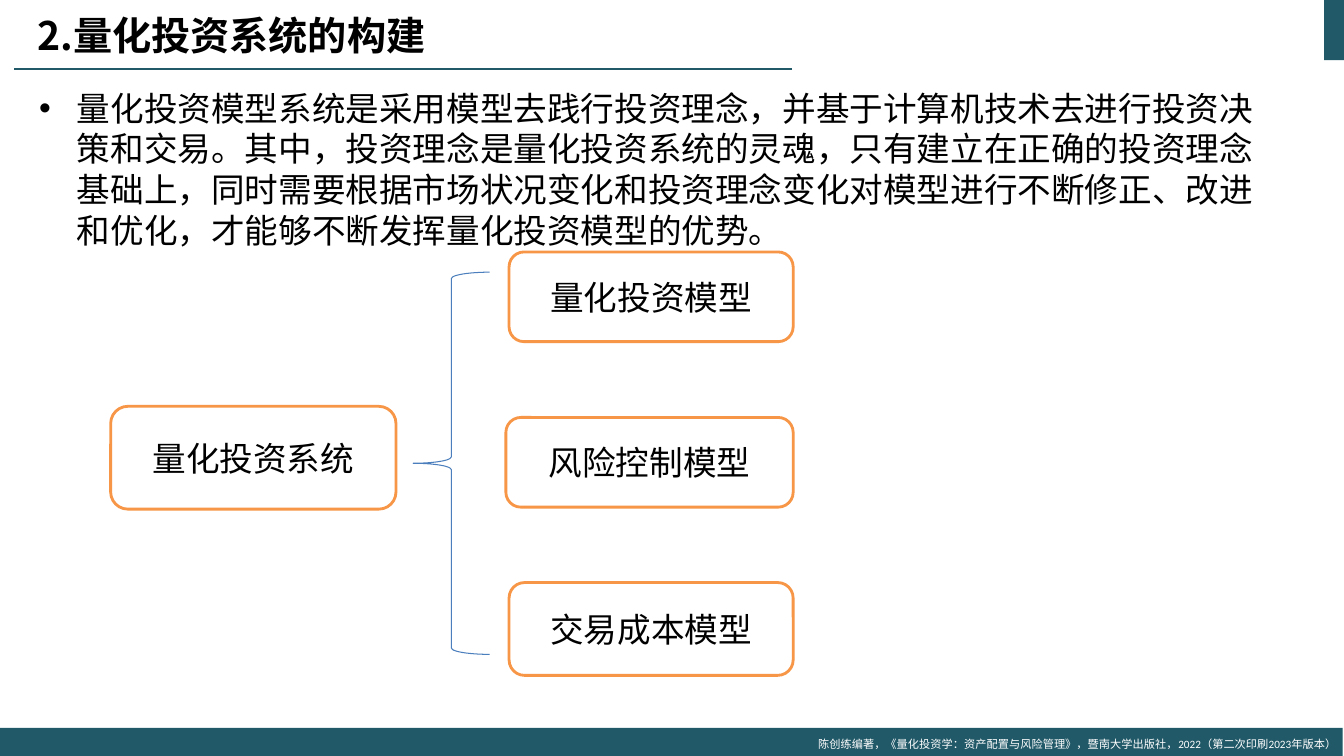
from dataclasses import dataclass

import pptx
import pptx.dml.color
import pptx.enum.shapes
import pptx.enum.text
import pptx.oxml
import pptx.oxml.ns
import pptx.util

Cm = pptx.util.Cm
Pt = pptx.util.Pt
rgb = pptx.dml.color.RGBColor.from_string
SHAPE = pptx.enum.shapes.MSO_SHAPE
ALIGN = pptx.enum.text.PP_ALIGN
ANCHOR = pptx.enum.text.MSO_ANCHOR


@dataclass
class Theme:
    teal: str = "215968"
    orange: str = "F79646"
    blue: str = "4B7EBC"
    white: str = "FFFFFF"
    black: str = "000000"
    cjk: str = "Noto Sans CJK SC"
    latin: str = "Calibri"
    body_font: str = "Arial"
    title_size: int = 28
    text_size: int = 24
    footer_size: int = 8


theme = Theme()


def add_panel(kind, box, fill=None, line=None, width=0.75):
    """Add a preset shape without shadow; box is left, top, width, height in cm."""
    sp = slide.shapes.add_shape(kind, *[Cm(v) for v in box])
    sp.shadow.inherit = False
    if fill:
        sp.fill.solid()
        sp.fill.fore_color.rgb = rgb(fill)
    else:
        sp.fill.background()
    if line:
        sp.line.color.rgb = rgb(line)
        sp.line.width = Pt(width)
    else:
        sp.line.fill.background()
    return sp


def write(sp, text, size, font, color=theme.black, align=ALIGN.CENTER, bold=False):
    """Fill a shape with one paragraph, using the theme's East Asian font."""
    tf = sp.text_frame
    tf.word_wrap = True
    tf.vertical_anchor = ANCHOR.MIDDLE
    p = tf.paragraphs[0]
    p.text = text
    p.alignment = align
    r = p.runs[0]
    r.font.size = Pt(size)
    r.font.name = font
    r.font.bold = bold
    r.font.color.rgb = rgb(color)
    ea = pptx.oxml.parse_xml(
        f'<a:ea {pptx.oxml.ns.nsdecls("a")} typeface="{theme.cjk}"/>')
    r.font._element.find(pptx.oxml.ns.qn("a:latin")).addnext(ea)
    return p


prs = pptx.Presentation()
prs.slide_width = Cm(33.87)
prs.slide_height = Cm(19.05)
slide = prs.slides.add_slide(prs.slide_layouts[6])

# Frame: corner block, title rule, footer
add_panel(SHAPE.RECTANGLE, (33.37, 0, 0.5, 1.52), fill=theme.teal)
rule = slide.shapes.add_connector(
    pptx.enum.shapes.MSO_CONNECTOR.STRAIGHT, Cm(19.96), Cm(1.73), Cm(0.36), Cm(1.73))
rule.line.color.rgb = rgb(theme.teal)
rule.line.width = Pt(1.5)
rule._element.spPr.append(
    pptx.oxml.parse_xml(f'<a:effectLst {pptx.oxml.ns.nsdecls("a")}/>'))
add_panel(SHAPE.RECTANGLE, (0, 18.34, 33.84, 0.71), fill=theme.teal)
footer = slide.shapes.add_textbox(Cm(20.24), Cm(18.44), Cm(13.69), Cm(0.61))
write(footer, "陈创练编著，《量化投资学：资产配置与风险管理》，暨南大学出版社，2022（第二次印刷2023年版本）",
      theme.footer_size, theme.latin, theme.white, ALIGN.RIGHT)

title = slide.shapes.add_textbox(Cm(-2.08), Cm(0.1), Cm(15.82), Cm(1.55))
write(title, "2.量化投资系统的构建", theme.title_size, theme.cjk, bold=True)

# Diagram: the system and its three models
add_panel(SHAPE.LEFT_BRACE, (10.41, 6.86, 1.93, 9.63), line=theme.blue)
nodes = [
    ("量化投资系统", (2.79, 10.24, 7.19, 2.59)),
    ("量化投资模型", (12.83, 6.35, 7.16, 2.26)),
    ("风险控制模型", (12.75, 10.52, 7.24, 2.26)),
    ("交易成本模型", (12.83, 14.68, 7.16, 2.34)),
]
for label, box in nodes:
    node = add_panel(SHAPE.ROUNDED_RECTANGLE, box, theme.white, theme.orange, 2)
    write(node, label, theme.text_size, theme.latin)

body = slide.shapes.add_textbox(Cm(0.74), Cm(2.08), Cm(31.39), Cm(4.37))
p = write(
    body,
    "量化投资模型系统是采用模型去践行投资理念，并基于计算机技术去进行投资决策和交易。"
    "其中，投资理念是量化投资系统的灵魂，只有建立在正确的投资理念基础上，"
    "同时需要根据市场状况变化和投资理念变化对模型进行不断修正、改进和优化，"
    "才能够不断发挥量化投资模型的优势。",
    theme.text_size, theme.body_font, align=ALIGN.LEFT)
body.text_frame.vertical_anchor = ANCHOR.TOP
body.text_frame.auto_size = pptx.enum.text.MSO_AUTO_SIZE.SHAPE_TO_FIT_TEXT
p.line_spacing = Pt(29)
pPr = p._p.get_or_add_pPr()
pPr.set("marL", str(Cm(0.95)))
pPr.set("indent", str(-Cm(0.95)))
for tag, value in (("buFont", f'typeface="{theme.body_font}"'), ("buChar", 'char="•"')):
    pPr.append(pptx.oxml.parse_xml(f'<a:{tag} {pptx.oxml.ns.nsdecls("a")} {value}/>'))

prs.save("out.pptx")
